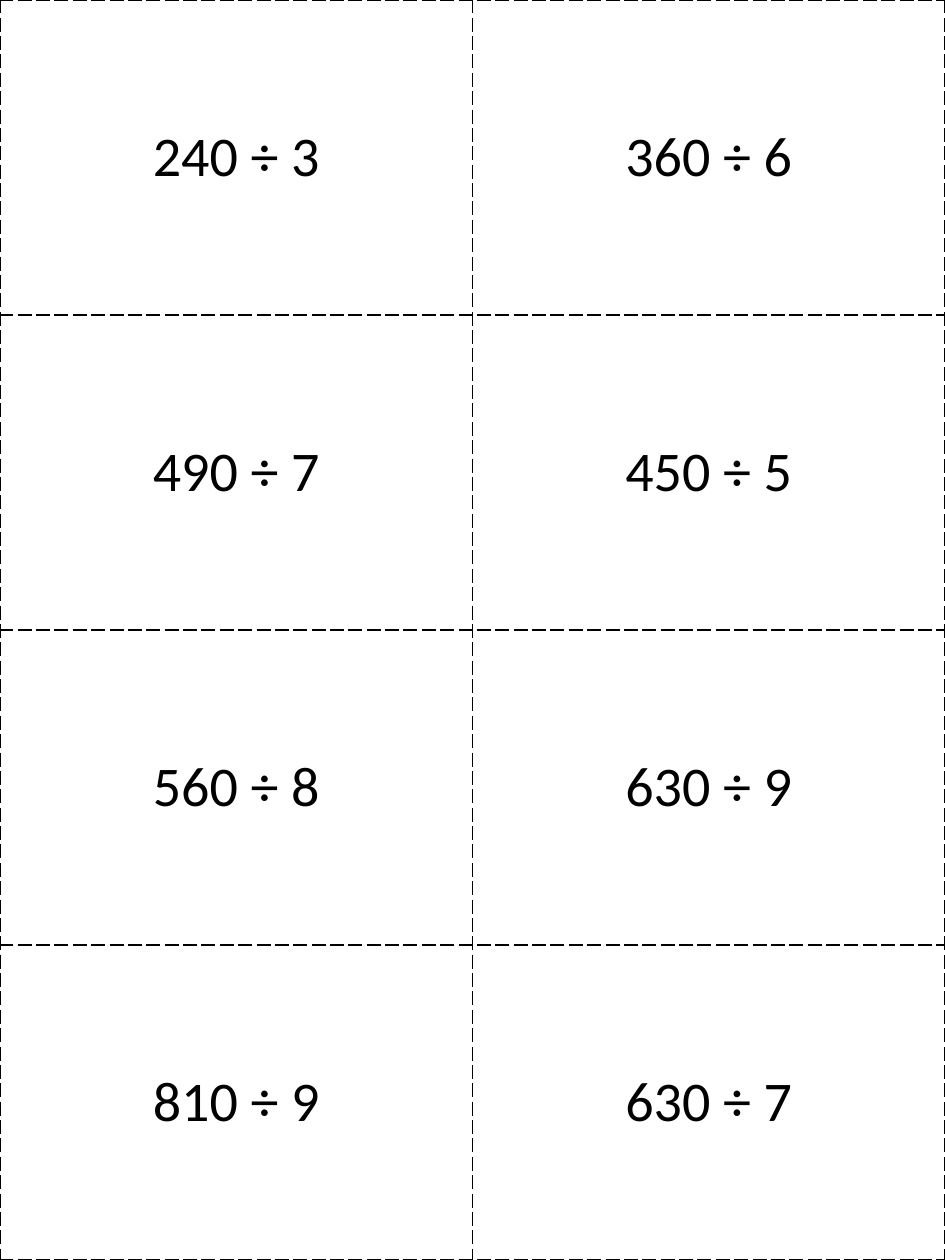
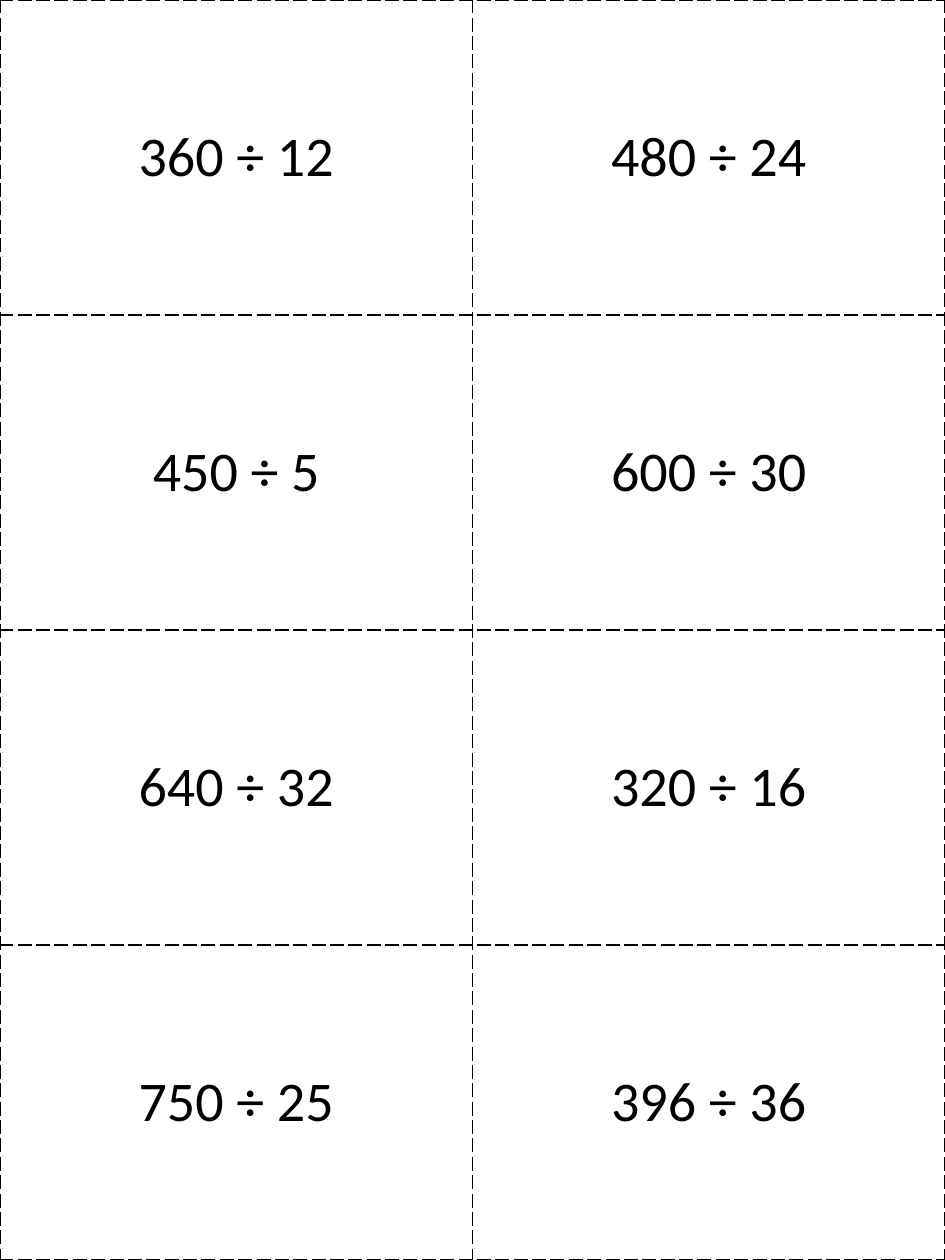
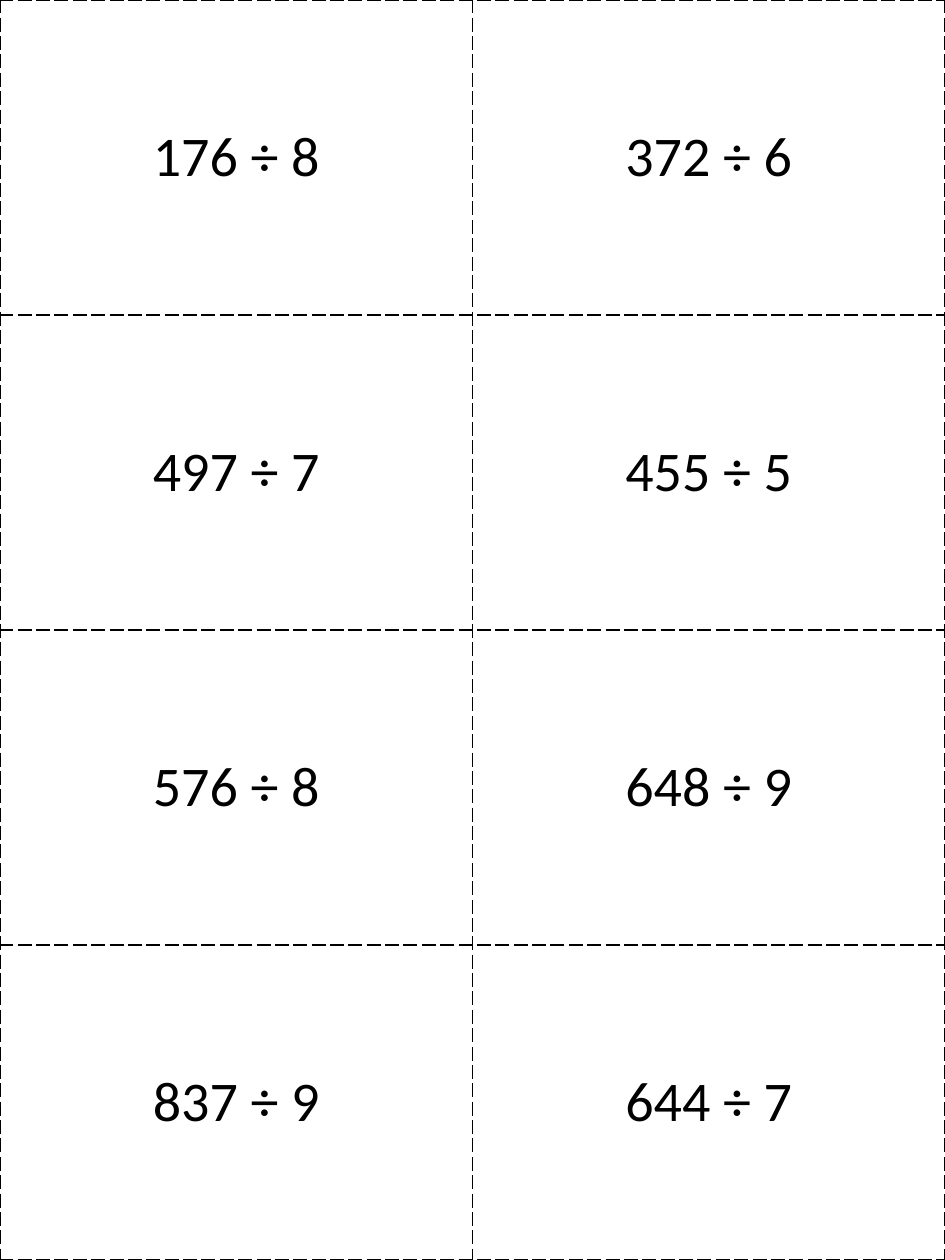
"""Build three sheets of division cards, each a grid with dashed cutting lines."""

from lxml import etree
from pptx import Presentation
from pptx.dml.color import RGBColor
from pptx.enum.text import MSO_ANCHOR, PP_ALIGN
from pptx.oxml.ns import qn
from pptx.util import Inches, Pt

MIDDLE = MSO_ANCHOR.MIDDLE
CENTER = PP_ALIGN.CENTER
BLACK = RGBColor(0x00, 0x00, 0x00)
WHITE = RGBColor(0xFF, 0xFF, 0xFF)
FONT = "Calibri"
PAGE_WIDTH, PAGE_HEIGHT = 7.5, 10
COLUMNS, ROWS = 2, 4
BLANK_LAYOUT = 6

CARD_SHEETS = [
    [
        ["240 ÷ 3", "360 ÷ 6"],
        ["490 ÷ 7", "450 ÷ 5"],
        ["560 ÷ 8", "630 ÷ 9"],
        ["810 ÷ 9", "630 ÷ 7"],
    ],
    [
        ["360 ÷ 12", "480 ÷ 24"],
        ["450 ÷ 5", "600 ÷ 30"],
        ["640 ÷ 32", "320 ÷ 16"],
        ["750 ÷ 25", "396 ÷ 36"],
    ],
    [
        ["176 ÷ 8", "372 ÷ 6"],
        ["497 ÷ 7", "455 ÷ 5"],
        ["576 ÷ 8", "648 ÷ 9"],
        ["837 ÷ 9", "644 ÷ 7"],
    ],
]


def write_text(cell, text, size=32, color=BLACK, font=FONT, align=CENTER, anchor=MIDDLE):
    cell.vertical_anchor = anchor
    paragraph = cell.text_frame.paragraphs[0]
    paragraph.alignment = align
    run = paragraph.add_run()
    run.text = text
    run.font.size = Pt(size)
    run.font.name = font
    run.font.color.rgb = color


def add_borders(cell, color=BLACK, width=1, dash="lgDash"):
    properties = cell._tc.get_or_add_tcPr()
    for side in ("a:lnL", "a:lnR", "a:lnT", "a:lnB"):
        line = etree.SubElement(properties, qn(side), w=str(Pt(width)))
        fill = etree.SubElement(line, qn("a:solidFill"))
        etree.SubElement(fill, qn("a:srgbClr"), val=str(color))
        etree.SubElement(line, qn("a:prstDash"), val=dash)


presentation = Presentation()
presentation.slide_width = Inches(PAGE_WIDTH)
presentation.slide_height = Inches(PAGE_HEIGHT)
background = presentation.slide_master.background.fill
background.solid()
background.fore_color.rgb = WHITE

for cards in CARD_SHEETS:
    slide = presentation.slides.add_slide(presentation.slide_layouts[BLANK_LAYOUT])
    table = slide.shapes.add_table(
        ROWS, COLUMNS, Inches(0), Inches(0), Inches(PAGE_WIDTH), Inches(PAGE_HEIGHT)
    ).table
    table.first_row = False
    table.horz_banding = False
    for row_index, row in enumerate(cards):
        for column_index, problem in enumerate(row):
            cell = table.cell(row_index, column_index)
            write_text(cell, problem)
            add_borders(cell)
            cell.fill.background()

presentation.save("out.pptx")
